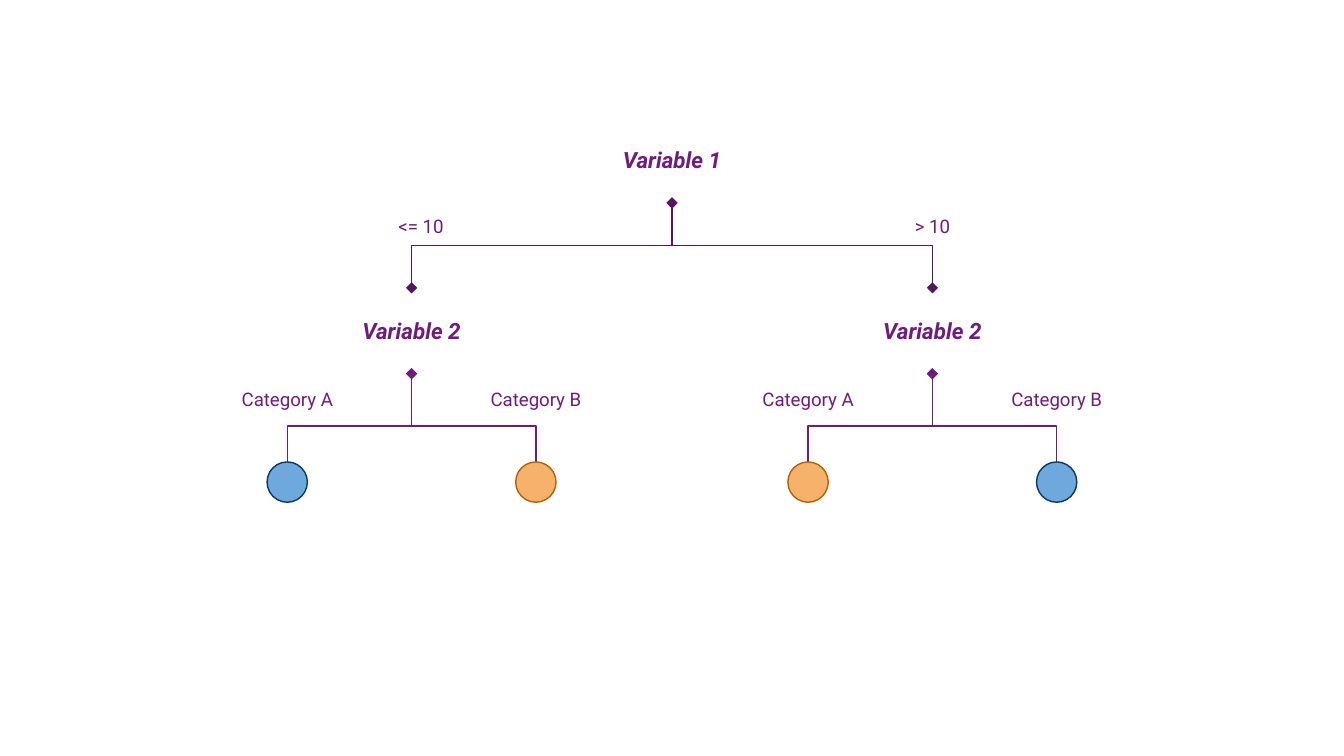
from lxml.etree import SubElement
from pptx import Presentation
from pptx.dml.color import RGBColor
from pptx.enum.shapes import MSO_CONNECTOR, MSO_SHAPE
from pptx.enum.text import MSO_ANCHOR, PP_ALIGN
from pptx.oxml.ns import qn
from pptx.util import Pt

PURPLE, DARK_PURPLE = "701C7F", "551561"
BLUE = ("6FA8DC", "073763")
ORANGE = ("F6B26B", "B45F06")
BOX_WIDTH, NODE_HEIGHT, LABEL_HEIGHT = 121, 46, 27.4
LEAF_SIZE = 21.6


def color(value):
    return RGBColor.from_string(value)


def add_text(slide, text, center, top, height, size, strong=False):
    box = slide.shapes.add_textbox(Pt(center - BOX_WIDTH / 2), Pt(top), Pt(BOX_WIDTH), Pt(height))
    frame = box.text_frame
    frame.word_wrap = True
    frame.vertical_anchor = MSO_ANCHOR.MIDDLE
    frame.margin_left = frame.margin_right = Pt(7.2)
    frame.margin_top = frame.margin_bottom = Pt(7.2)
    para = frame.paragraphs[0]
    para.alignment = PP_ALIGN.CENTER
    span = para.add_run()
    span.text = text
    span.font.name = "Roboto"
    span.font.size = Pt(size)
    span.font.bold = span.font.italic = strong
    span.font.color.rgb = color(PURPLE)


def add_branch(slide, parent_x, child_x, top, bottom, line_color):
    """Elbow that leaves the parent downwards: a flat one turned by 270 degrees."""
    run, drop = abs(child_x - parent_x), bottom - top
    middle_x, middle_y = (parent_x + child_x) / 2, (top + bottom) / 2
    left, right = middle_x - drop / 2, middle_x + drop / 2
    if child_x > parent_x:
        left, right = right, left
    branch = slide.shapes.add_connector(MSO_CONNECTOR.ELBOW, Pt(left), Pt(middle_y - run / 2),
                                        Pt(right), Pt(middle_y + run / 2))
    branch.line.color.rgb = color(line_color)
    branch.line.width = Pt(0.75)
    properties = branch._element.spPr
    properties.find(qn("a:xfrm")).set("rot", str(270 * 60000))
    line = properties.find(qn("a:ln"))
    for end in ("a:headEnd", "a:tailEnd"):
        SubElement(line, qn(end), type="diamond")
    SubElement(properties, qn("a:effectLst"))


def add_leaf(slide, center, top, colors):
    fill, outline = colors
    leaf = slide.shapes.add_shape(MSO_SHAPE.OVAL, Pt(center - LEAF_SIZE / 2), Pt(top),
                                  Pt(LEAF_SIZE), Pt(LEAF_SIZE))
    leaf.shadow.inherit = False
    leaf.fill.solid()
    leaf.fill.fore_color.rgb = color(fill)
    leaf.line.color.rgb = color(outline)
    leaf.line.width = Pt(0.75)


def add_split(slide, name, center, top, children, drop, line_color):
    """Variable name with one branch to each child position; returns the branch ends' height."""
    bottom = top + NODE_HEIGHT
    for child in children:
        add_branch(slide, center, child, bottom, bottom + drop, line_color)
    add_text(slide, name, center, top, NODE_HEIGHT, 12, strong=True)
    return bottom + drop


def add_tree(slide, center, top):
    # Root split
    nodes = (center - 139.5, center + 139.5)
    level = add_split(slide, "Variable 1", center, top, nodes, 45.5, DARK_PURPLE)
    for text, label_x in (("<= 10", nodes[0] + 5), ("> 10", nodes[1])):
        add_text(slide, text, label_x, level - 46.9, LABEL_HEIGHT, 10)

    # Second splits with their leaves
    for node, leaf_colors in zip(nodes, ((BLUE, ORANGE), (ORANGE, BLUE))):
        leaves = (node - 66.6, node + 66.6)
        end = add_split(slide, "Variable 2", node, level, leaves, 56, PURPLE)
        for text, leaf, colors in zip(("Category A", "Category B"), leaves, leaf_colors):
            add_text(slide, text, leaf, level + NODE_HEIGHT, LABEL_HEIGHT, 10)
            add_leaf(slide, leaf, end - 8.7, colors)


def main():
    deck = Presentation()
    deck.slide_width, deck.slide_height = Pt(720), Pt(405)
    page = deck.slides.add_slide(deck.slide_layouts[6])
    page.background.fill.solid()
    page.background.fill.fore_color.rgb = color("FFFFFF")
    add_tree(page, center=360, top=62.7)
    deck.save("out.pptx")


if __name__ == "__main__":
    main()
